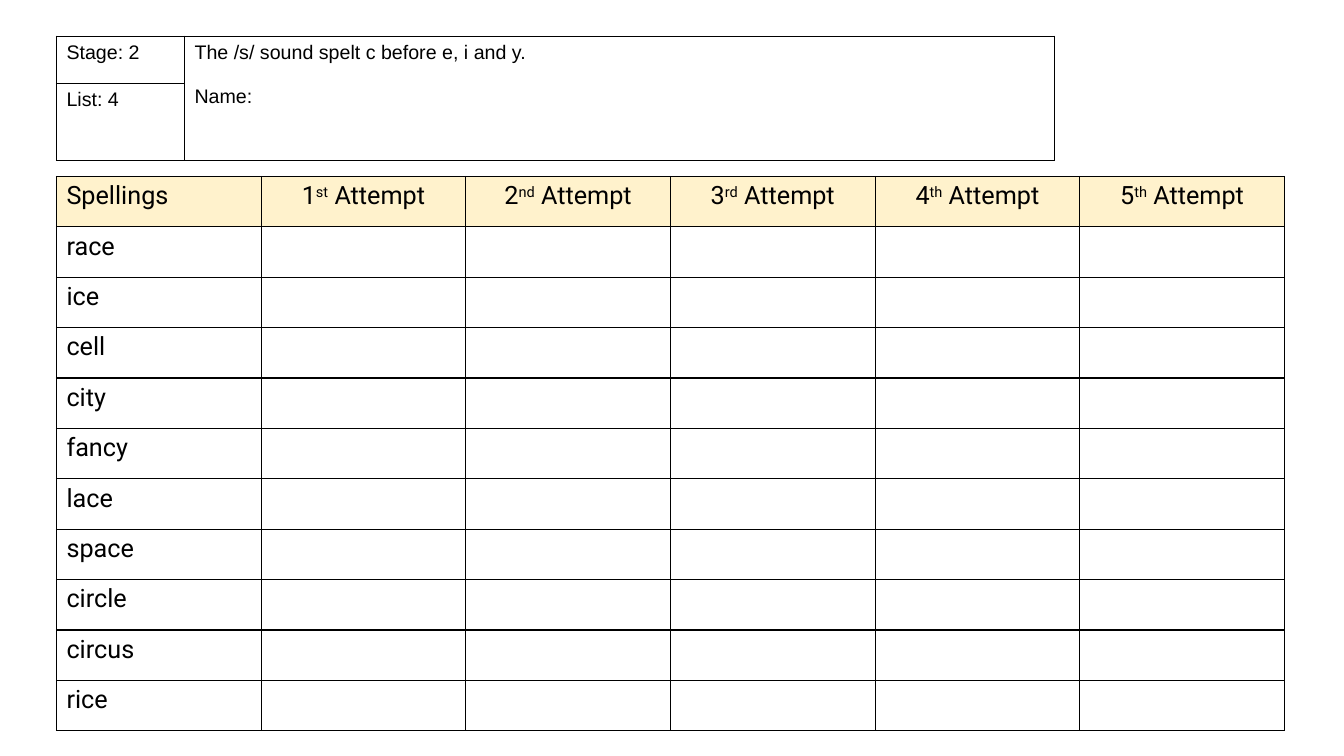
"""Build a spelling practice slide with a heading table and an attempts grid."""
from lxml import etree
from pptx import Presentation
from pptx.dml.color import RGBColor
from pptx.enum import text
from pptx.oxml import ns
from pptx.util import Inches, Pt

STAGE, SPELLING_LIST = "Stage: 2", "List: 4"
RULE_AND_NAME = ["The /s/ sound spelt c before e, i and y.", "Name:"]
ORDINALS = ["st", "nd", "rd", "th", "th"]
WORDS = ["race", "ice", "cell", "city", "fancy",
         "lace", "space", "circle", "circus", "rice"]

INK, HEADER_FILL = "000000", "FFF2CC"
LEFT = 0.56


def paint(color, hex_value):
    color.rgb = RGBColor.from_string(hex_value)


def add_border(cell):
    properties = cell._tc.get_or_add_tcPr()
    for side in ("a:lnL", "a:lnR", "a:lnT", "a:lnB"):
        line = etree.SubElement(properties, ns.qn(side), w=str(Pt(1)))
        fill = etree.SubElement(line, ns.qn("a:solidFill"))
        etree.SubElement(fill, ns.qn("a:srgbClr"), val=INK)


def add_grid(slide, top, widths, heights):
    frame = slide.shapes.add_table(
        len(heights), len(widths), Inches(LEFT), Inches(top),
        Inches(sum(widths)), Inches(sum(heights)))
    grid = frame.table
    grid.first_row = grid.horz_banding = False
    for column, width in zip(grid.columns, widths):
        column.width = Inches(width)
    for row, height in zip(grid.rows, heights):
        row.height = Inches(height)
    for cell in grid.iter_cells():
        add_border(cell)
        cell.fill.background()
    return grid


def style_text(grid, font_name, size):
    for cell in grid.iter_cells():
        for paragraph in cell.text_frame.paragraphs:
            for run in paragraph.runs:
                run.font.name = font_name
                run.font.size = Pt(size)
                paint(run.font.color, INK)


def build_attempts(slide):
    grid = add_grid(slide, 1.75, [2.03] * (len(ORDINALS) + 1),
                    [0.5] * (len(WORDS) + 1))
    for row, word in enumerate(["Spellings"] + WORDS):
        grid.cell(row, 0).text_frame.text = word
    for number, ordinal in enumerate(ORDINALS, 1):
        paragraph = grid.cell(0, number).text_frame.paragraphs[0]
        paragraph.alignment = text.PP_ALIGN.CENTER
        for part in (str(number), ordinal, " Attempt"):
            run = paragraph.add_run()
            run.text = part
            if part == ordinal:
                run._r.get_or_add_rPr().set("baseline", "30000")
    for header in grid.rows[0].cells:
        header.fill.solid()
        paint(header.fill.fore_color, HEADER_FILL)
    style_text(grid, "Roboto", 18)


def build_heading(slide):
    grid = add_grid(slide, 0.36, [1.27, 8.63], [0.47, 0.76])
    grid.cell(0, 1).merge(grid.cell(1, 1))
    grid.cell(0, 0).text_frame.text = STAGE
    grid.cell(1, 0).text_frame.text = SPELLING_LIST
    rule = grid.cell(0, 1).text_frame
    rule.text = "\n".join(RULE_AND_NAME)
    rule.paragraphs[1].space_before = Pt(16)
    style_text(grid, "Arial", 14)


def main():
    deck = Presentation()
    deck.slide_width, deck.slide_height = Inches(13.33), Inches(7.5)
    slide = deck.slides.add_slide(deck.slide_layouts[6])
    build_attempts(slide)
    build_heading(slide)
    deck.save("out.pptx")


if __name__ == "__main__":
    main()
